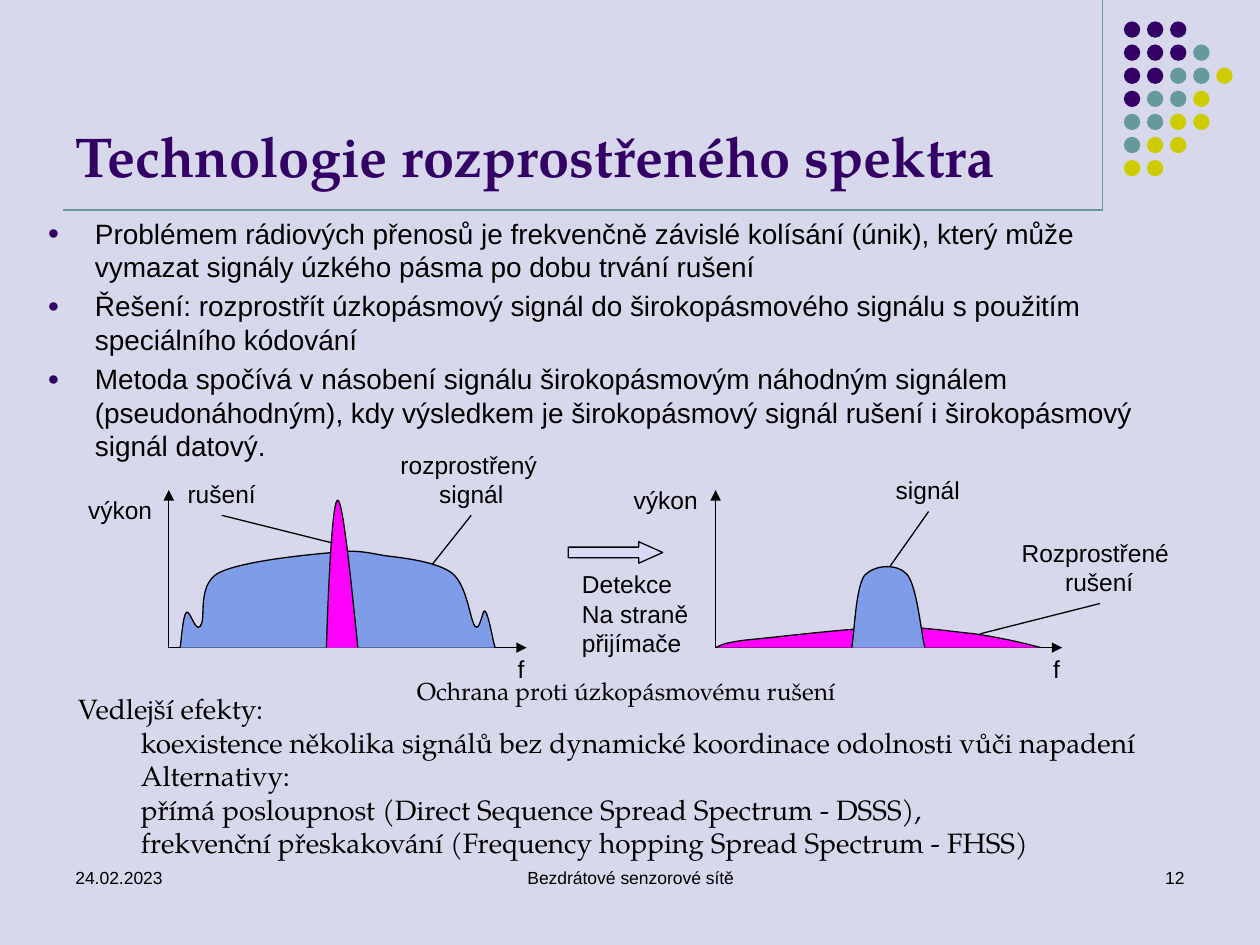
from dataclasses import dataclass

from lxml import etree
from pptx import Presentation
from pptx import util as u
from pptx.dml.color import RGBColor
from pptx.enum import shapes, text
from pptx.oxml import ns

Inches, Pt = u.Inches, u.Pt


@dataclass(frozen=True)
class Theme:
    background: str = "D8D8EC"
    purple: str = "330066"
    teal: str = "669999"
    yellow: str = "CCCC00"
    ink: str = "000000"
    signal: str = "7E9CE8"
    noise: str = "FF00FF"
    arrow: str = "DADAF6"
    sans: str = "Arial"
    serif: str = "TeX Gyre Pagella"
    title: float = 32
    body: float = 16
    label: float = 14
    footer: float = 10
    line: float = 0.75


theme = Theme()
deck = Presentation()
deck.slide_width, deck.slide_height = Inches(10), Inches(7.5)
page = deck.slides.add_slide(deck.slide_layouts[6])
page.background.fill.solid()
page.background.fill.fore_color.rgb = RGBColor.from_string(theme.background)


def add_text(content, at, size=theme.label, font=theme.sans, color=theme.ink, bold=False,
             aligns="l", wrap=True, anchor=text.MSO_ANCHOR.TOP, bullet=False, indents=(0,)):
    """Write one paragraph per line; the last align and indent carry on."""
    box = page.shapes.add_textbox(*map(Inches, at))
    frame = box.text_frame
    frame.word_wrap, frame.vertical_anchor = wrap, anchor
    for i, words in enumerate(content.split("\n")):
        para = frame.paragraphs[0] if i == 0 else frame.add_paragraph()
        para.alignment = {"l": text.PP_ALIGN.LEFT, "c": text.PP_ALIGN.CENTER,
                          "r": text.PP_ALIGN.RIGHT}[aligns[min(i, len(aligns) - 1)]]
        span = para.add_run()
        span.text = words
        span.font.size, span.font.name, span.font.bold = Pt(size), font, bold
        span.font.color.rgb = RGBColor.from_string(color)
        props = para._p.get_or_add_pPr()
        props.set("marL", str(Inches(indents[min(i, len(indents) - 1)])))
        if bullet:
            para.space_before = Pt(size * 0.2)
            props.set("indent", str(-Inches(indents[-1])))
            bullet_color = etree.SubElement(props, ns.qn("a:buClr"))
            etree.SubElement(bullet_color, ns.qn("a:srgbClr"), val=theme.purple)
            etree.SubElement(props, ns.qn("a:buSzPct"), val="70000")
            etree.SubElement(props, ns.qn("a:buFont"), typeface=theme.sans)
            etree.SubElement(props, ns.qn("a:buChar"), char="●")


def add_line(start, end, color=theme.ink, arrow=False):
    line = page.shapes.add_connector(
        shapes.MSO_CONNECTOR.STRAIGHT, *map(Inches, (*start, *end)))
    line.line.color.rgb = RGBColor.from_string(color)
    line.line.width = Pt(theme.line)
    if arrow:
        etree.SubElement(line.line._get_or_add_ln(), ns.qn("a:tailEnd"), type="triangle")
    etree.SubElement(line._element.spPr, ns.qn("a:effectLst"))


# Frame lines and dot pattern in the corner
rule_y = 5 / 3
add_line((8.75, 0), (8.75, rule_y), theme.teal)
add_line((0.5, rule_y), (8.75, rule_y), theme.teal)
dot_colors = {"P": theme.purple, "T": theme.teal, "Y": theme.yellow}
dot_pitch = 1.1 / 6
for row, pattern in enumerate(["PPP", "PPPT", "PPTTY", "PTTY", "TTYY", "TYY", "YY"]):
    for column, key in enumerate(pattern):
        dot = page.shapes.add_shape(
            shapes.MSO_SHAPE.OVAL, Inches(8.92 + column * dot_pitch),
            Inches(0.17 + row * dot_pitch), Inches(0.13), Inches(0.13))
        dot.shadow.inherit = False
        dot.fill.solid()
        dot.fill.fore_color.rgb = RGBColor.from_string(dot_colors[key])
        dot.line.fill.background()

# Title and bullets
add_text("Technologie rozprostřeného spektra", (0.5, 0.13, 8.25, 1.42), size=theme.title,
         font=theme.serif, color=theme.purple, bold=True, anchor=text.MSO_ANCHOR.BOTTOM)
add_text("Problémem rádiových přenosů je frekvenčně závislé kolísání (únik), který může "
         "vymazat signály úzkého pásma po dobu trvání rušení\n"
         "Řešení: rozprostřít úzkopásmový signál do širokopásmového signálu s použitím "
         "speciálního kódování\n"
         "Metoda spočívá v násobení signálu širokopásmovým náhodným signálem "
         "(pseudonáhodným), kdy výsledkem je širokopásmový signál rušení i širokopásmový "
         "signál datový.",
         (0.28, rule_y, 9.22, 1.23), size=theme.body, bullet=True, indents=(3 / 8,))

# Axes of both charts
base = 5.14
for left, right in [(1.34, 4.18), (5.68, 8.43)]:
    add_line((left, base), (right, base), arrow=True)
    add_line((left, base), (left, 3.89), arrow=True)

# Spectrum curves: a start point, then two handles and an end point per Bezier segment
curves = [
    (theme.signal, [
        (1.43, base), (1.44, 5.09), (1.45, 4.89), (1.48, 4.86),
        (1.51, 4.84), (1.55, 5.02), (1.59, 4.97), (1.64, 4.92), (1.56, 4.65), (1.73, 4.55),
        (1.9, 4.46), (2.37, 4.41), (2.59, 4.39), (2.81, 4.36), (2.89, 4.38), (3.05, 4.41),
        (3.22, 4.43), (3.47, 4.46), (3.59, 4.55), (3.71, 4.65), (3.73, 4.92), (3.77, 4.97),
        (3.81, 5.02), (3.83, 4.83), (3.85, 4.85), (3.88, 4.88), (3.91, 5.08), (3.93, base)]),
    (theme.noise, [
        (2.59, base), (2.61, 4.55), (2.64, 3.97), (2.68, 3.97),
        (2.72, 3.97), (2.78, 4.55), (2.84, base)]),
    (theme.noise, [
        (5.68, base), (5.72, 5.13), (5.69, 5.11), (5.92, 5.08),
        (6.14, 5.06), (6.71, 4.99), (7.01, 4.98), (7.31, 4.97), (7.52, 5.01), (7.73, 5.03),
        (7.94, 5.06), (8.15, 5.11), (8.26, base)]),
    (theme.signal, [
        (6.76, base), (6.78, 5.04), (6.79, 4.67), (6.86, 4.57),
        (6.94, 4.48), (7.12, 4.47), (7.2, 4.56), (7.28, 4.66), (7.31, 5.02), (7.34, base)]),
]
for color, points in curves:
    start, *rest = [tuple(map(Inches, point)) for point in points]
    builder = page.shapes.build_freeform(*start)
    builder.add_line_segments(rest, close=False)
    curve = builder.convert_to_shape()
    # Join every three line segments into one Bezier segment
    segments = list(curve._element.iter(ns.qn("a:lnTo")))
    for i in range(0, len(segments), 3):
        bezier = etree.Element(ns.qn("a:cubicBezTo"))
        segments[i].addprevious(bezier)
        for segment in segments[i:i + 3]:
            bezier.append(segment[0])
            segment.getparent().remove(segment)
    curve.shadow.inherit = False
    curve.fill.solid()
    curve.fill.fore_color.rgb = RGBColor.from_string(color)
    curve.line.color.rgb = RGBColor.from_string(theme.ink)
    curve.line.width = Pt(theme.line)

# Block arrow between the charts
arrow = page.shapes.add_shape(
    shapes.MSO_SHAPE.RIGHT_ARROW, Inches(4.51), Inches(4.3), Inches(0.75), Inches(0.17))
arrow.adjustments[0], arrow.adjustments[1] = 0.5, 1.12
arrow.shadow.inherit = False
arrow.fill.solid()
arrow.fill.fore_color.rgb = RGBColor.from_string(theme.arrow)
arrow.line.color.rgb = RGBColor.from_string(theme.ink)
arrow.line.width = Pt(theme.line)

# Chart labels
for words, at in [
    ("Detekce\nNa straně\npřijímače", (4.52, 4.47, 1.05, 0.81)),
    ("rušení", (1.39, 3.75, 0.75, 0.34)),
    ("signál", (7.01, 3.72, 0.71, 0.34)),
    ("f", (4.01, base, 0.26, 0.33)),
    ("f", (8.26, base, 0.26, 0.33)),
    ("výkon", (0.6, 3.88, 0.71, 0.34)),
    ("výkon", (4.93, 3.8, 0.71, 0.34)),
]:
    add_text(words, at, wrap=False)
add_text("rozprostřený\nsignál", (3.08, 3.52, 1.32, 0.57), aligns="lc")
add_text("Rozprostřené\nrušení", (8.01, 4.22, 1.43, 0.57), aligns="lc")

# Footer
for words, left, width, align in [("24.02.2023", 0.5, 2.33, "l"),
                                  ("Bezdrátové senzorové sítě", 3.42, 3.17, "c"),
                                  ("12", 7.17, 2.33, "r")]:
    add_text(words, (left, 6.83, width, 0.5), size=theme.footer, aligns=align)

# Side effects and caption
add_text("Vedlejší efekty:\n"
         "koexistence několika signálů bez dynamické koordinace odolnosti vůči napadení\n"
         "Alternativy:\n"
         "přímá posloupnost (Direct Sequence Spread Spectrum - DSSS),\n"
         "frekvenční přeskakování (Frequency hopping Spread Spectrum - FHSS)",
         (0.52, 5.44, 8.79, 1.45), size=theme.body, font=theme.serif, indents=(0, 0.5))
add_text("Ochrana proti úzkopásmovému rušení", (3.21, 5.32, 3.57, 0.34),
         font=theme.serif, wrap=False)

# Leader lines from labels to curves
for start, end in [((3.74, 4.09), (3.43, 4.48)), ((7.37, 4.06), (7.06, 4.5)),
                   ((8.73, 4.79), (7.78, 5.03)), ((1.76, 4.09), (2.64, 4.31))]:
    add_line(start, end)

deck.save("out.pptx")
